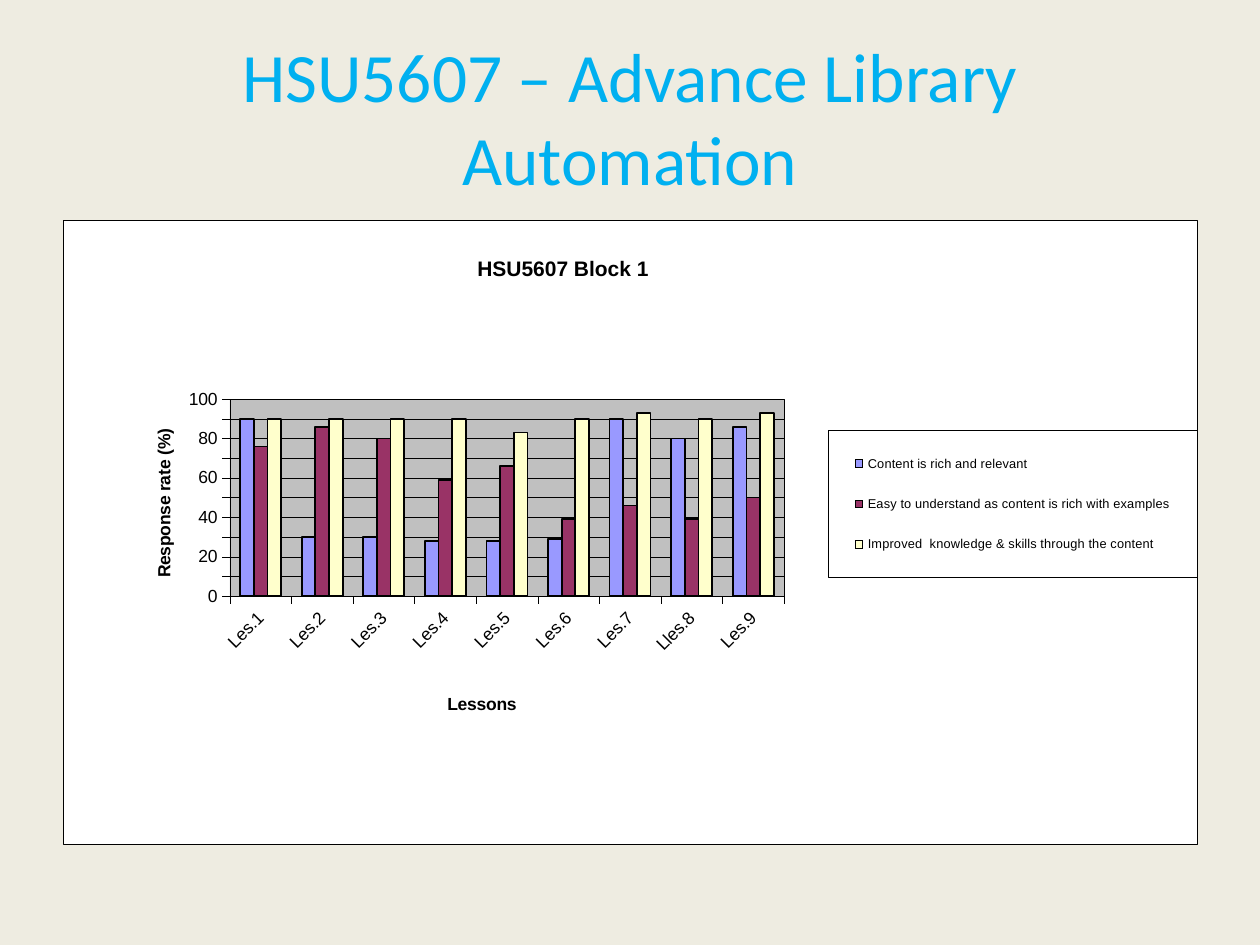
from typing import NamedTuple

from lxml.etree import SubElement
from pptx import Presentation
from pptx.chart.data import CategoryChartData
from pptx.dml.color import RGBColor
from pptx.enum.chart import XL_CHART_TYPE, XL_LEGEND_POSITION, XL_TICK_MARK
from pptx.enum.text import MSO_ANCHOR, PP_ALIGN
from pptx.oxml import parse_xml
from pptx.oxml.ns import nsdecls, qn
from pptx.util import Emu, Pt

PX = 914400 // 126
BLACK = "000000"


class Box(NamedTuple):
    x: int
    y: int
    w: int = 0
    h: int = 0


class Series(NamedTuple):
    name: str
    color: str
    vals: list[int]


FRAME = Box(63, 220, 1134, 624)
PLOT = Box(230, 399, 555, 197)
LEGEND = Box(828, 430, 369, 147)
LESSONS = ["Les.1", "Les.2", "Les.3", "Les.4", "Les.5", "Les.6", "Les.7", "Lles.8", "Les.9"]
SERIES = [
    Series("Content is rich and relevant", "9999FF",
           [90, 30, 30, 28, 28, 29, 90, 80, 86]),
    Series("Easy to understand as content is rich with examples", "993366",
           [76, 86, 80, 59, 66, 39, 46, 39, 50]),
    Series("Improved  knowledge & skills through the content", "FFFFCC",
           [90, 90, 90, 90, 83, 90, 93, 90, 93]),
]


def rgb(color: str) -> RGBColor:
    return RGBColor.from_string(color)


def px(box: Box) -> list[Emu]:
    return [Emu(n * PX) for n in box]


def style(font, size: float, color: str = BLACK, name: str = "Arial", bold: bool = False) -> None:
    font.size, font.name, font.bold = Pt(size), name, bold
    font.color.rgb = rgb(color)


def stroke(line, width: float = 0.25) -> None:
    line.color.rgb = rgb(BLACK)
    line.width = Pt(width)


def place(part, box: Box, inner: bool = False) -> None:
    """Pin a chart part to a box given in slide pixels."""
    layout = part.find(qn("c:layout"))
    if layout is None:
        layout = parse_xml(f"<c:layout {nsdecls('c')}/>")
        if part.tag == qn("c:plotArea"):
            part.insert(0, layout)
        else:
            part.find(qn("c:overlay")).addprevious(layout)
    for child in list(layout):
        layout.remove(child)
    manual = SubElement(layout, qn("c:manualLayout"))
    vals = {"xMode": "edge", "yMode": "edge",
            "x": round((box.x - FRAME.x) / FRAME.w, 3),
            "y": round((box.y - FRAME.y) / FRAME.h, 3)}
    if inner:
        vals = {"layoutTarget": "inner"} | vals
    if box.w:
        vals |= {"w": round(box.w / FRAME.w, 3), "h": round(box.h / FRAME.h, 3)}
    for key, val in vals.items():
        SubElement(manual, qn(f"c:{key}")).set("val", str(val))


def panel(color: str):
    """Shape properties for a filled area with a thin black border."""
    return parse_xml(
        f'<c:spPr {nsdecls("c", "a")}><a:solidFill><a:srgbClr val="{color}"/></a:solidFill>'
        f'<a:ln w="3175"><a:solidFill><a:srgbClr val="{BLACK}"/></a:solidFill></a:ln></c:spPr>')


def caption(owner, text: str, size: float) -> None:
    owner.has_title = True
    para = owner.axis_title.text_frame if hasattr(owner, "axis_title") else owner.chart_title.text_frame
    para.text = text
    style(para.paragraphs[0].font, size, bold=True)


def turn(body, angle: int) -> None:
    body.set("rot", str(angle * 60000))
    body.set("vert", "horz")


def add_title(slide, text: str) -> None:
    frame = slide.shapes.add_textbox(*px(Box(63, 38, 1134, 157))).text_frame
    frame.word_wrap = True
    frame.vertical_anchor = MSO_ANCHOR.MIDDLE
    para = frame.paragraphs[0]
    para.text = text
    para.alignment = PP_ALIGN.CENTER
    style(para.font, 39.6, "00B0F0", "Calibri")


def add_bars(slide) -> None:
    data = CategoryChartData()
    data.categories = LESSONS
    for item in SERIES:
        data.add_series(item.name, item.vals)
    chart = slide.shapes.add_chart(XL_CHART_TYPE.COLUMN_CLUSTERED, *px(FRAME), data).chart
    style(chart.font, 10)
    plot = chart.plots[0]
    plot.gap_width, plot.overlap, plot.vary_by_categories = 150, 0, False
    for bar, item in zip(plot.series, SERIES):
        bar.format.fill.solid()
        bar.format.fill.fore_color.rgb = rgb(item.color)
        stroke(bar.format.line, 1)

    cat, val = chart.category_axis, chart.value_axis
    for axis in (cat, val):
        axis.major_tick_mark = XL_TICK_MARK.OUTSIDE
        axis.minor_tick_mark = XL_TICK_MARK.NONE
        stroke(axis.format.line)
        style(axis.tick_labels.font, 10)
    val.minimum_scale, val.maximum_scale, val.major_unit = 0, 100, 10
    stroke(val.major_gridlines.format.line)

    caption(chart, "HSU5607 Block 1", 12)
    caption(cat, "Lessons", 10)
    caption(val, "Response rate (%)", 10)
    chart.has_legend = True
    chart.legend.position = XL_LEGEND_POSITION.RIGHT
    chart.legend.include_in_layout = False
    style(chart.legend.font, 7.3)

    def find(query: str):
        return chart.element.xpath(query)[0]

    turn(find(".//c:catAx/c:txPr/a:bodyPr"), -45)
    turn(find(".//c:valAx/c:title//a:bodyPr"), -90)
    place(find("c:chart/c:title"), Box(474, 251))
    place(find(".//c:catAx/c:title"), Box(444, 690))
    place(find(".//c:valAx/c:title"), Box(149, 426))
    place(find(".//c:legend"), LEGEND)
    place(find(".//c:plotArea"), PLOT, inner=True)
    find(".//c:plotArea").append(panel("C0C0C0"))
    find(".//c:legend/c:overlay").addnext(panel("FFFFFF"))
    find("c:chart").addnext(panel("FFFFFF"))


def main() -> None:
    deck = Presentation()
    deck.slide_width, deck.slide_height = Emu(1260 * PX), Emu(945 * PX)
    slide = deck.slides.add_slide(deck.slide_layouts[6])
    slide.background.fill.solid()
    slide.background.fill.fore_color.rgb = rgb("EEECE1")
    add_title(slide, "HSU5607 – Advance Library Automation")
    add_bars(slide)
    deck.save("out.pptx")


if __name__ == "__main__":
    main()
